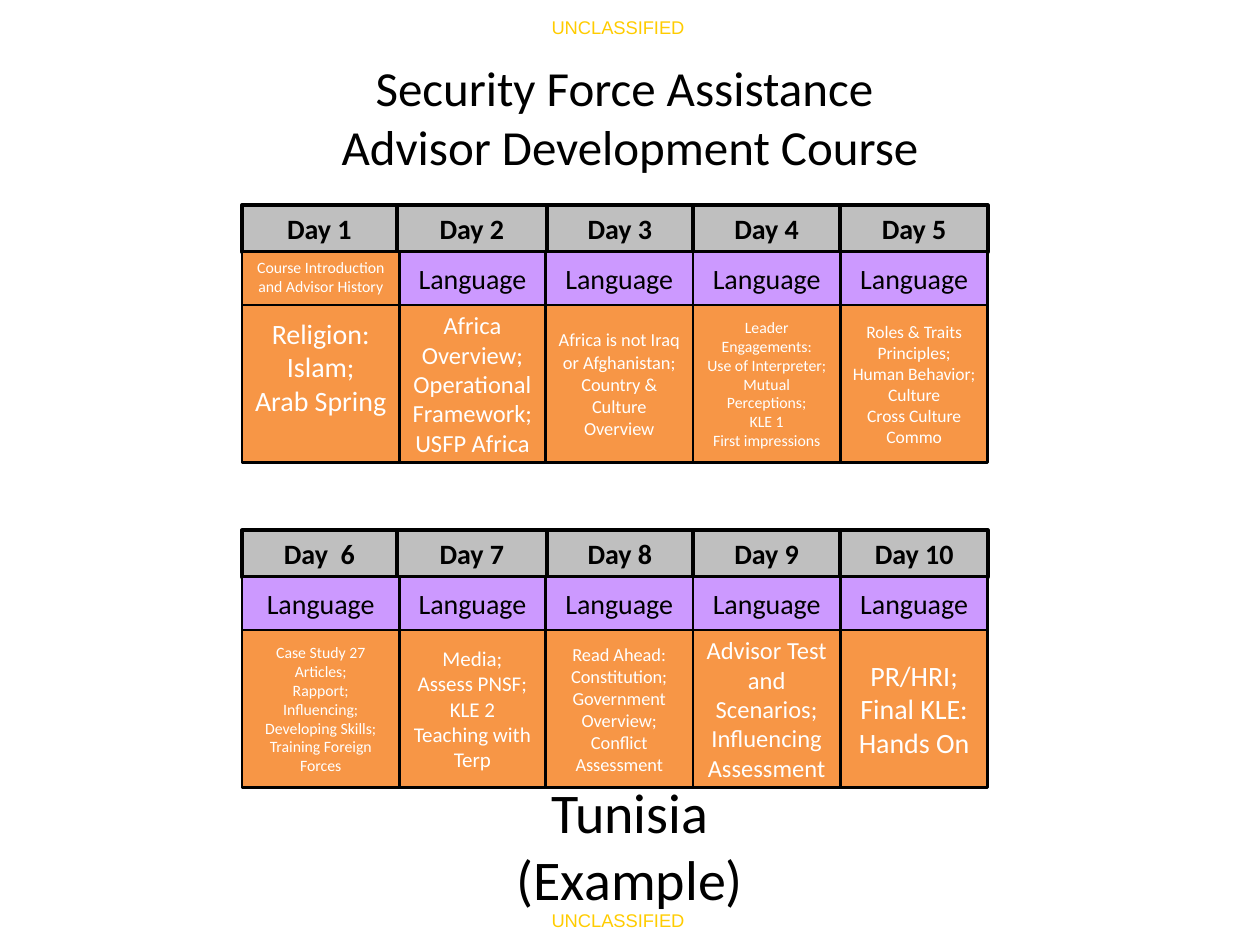
from dataclasses import dataclass
from itertools import pairwise

from pptx import Presentation
from pptx.dml.color import RGBColor
from pptx.enum.shapes import MSO_SHAPE as Shape
from pptx.enum.text import MSO_ANCHOR as Anchor, PP_ALIGN as Align
from pptx.util import Inches, Pt

BLACK = RGBColor(0x00, 0x00, 0x00)
WHITE = RGBColor(0xFF, 0xFF, 0xFF)
GRAY = RGBColor(0xBF, 0xBF, 0xBF)
ORANGE = RGBColor(0xF7, 0x96, 0x46)
PURPLE = RGBColor(0xCC, 0x99, 0xFF)
YELLOW = RGBColor(0xFF, 0xCC, 0x00)

DAY_EDGES = [1.92, 3.15, 4.34, 5.5, 6.67, 7.84]
EDGES = [1.92, 3.17, 4.33, 5.5, 6.67, 7.84]
DAY_H, LANG_H, TOPIC_H = 0.37, 0.42, 1.25


@dataclass
class Style:
    fill: RGBColor
    color: RGBColor
    line: float = 1.5
    bold: bool = False


@dataclass
class Topic:
    text: str
    size: float
    head: float = 0.01  # top inset
    foot: float = 0.01  # bottom inset


@dataclass
class Week:
    top: float
    days: list[str]
    topics: list[Topic]
    intro: str = ""  # takes the first language slot


DAY = Style(GRAY, BLACK, 2.25, True)
LANG = Style(PURPLE, BLACK)
TOPIC = Style(ORANGE, WHITE)

WEEKS = [
    Week(1.63, ["Day 1", "Day 2", "Day 3", "Day 4", "Day 5"], [
        Topic("Religion:\nIslam;\nArab Spring", 16, foot=0.28),
        Topic("Africa Overview;\nOperational Framework;\nUSFP Africa", 14),
        Topic("Africa is not Iraq or Afghanistan;\nCountry & Culture Overview", 10.5),
        Topic("Leader Engagements:\nUse of Interpreter;\nMutual Perceptions;\n"
              "KLE 1\nFirst impressions", 9),
        Topic("Roles & Traits\nPrinciples;\nHuman Behavior;\nCulture\n"
              "Cross Culture Commo", 10),
    ], "Course Introduction and Advisor History"),
    Week(4.21, ["Day  6", "Day 7", "Day 8", "Day 9", "Day 10"], [
        Topic("Case Study 27 Articles;\nRapport;\nInfluencing;\n"
              "Developing Skills;\nTraining Foreign Forces", 9),
        Topic("Media;\nAssess PNSF;\nKLE 2 Teaching with Terp", 12),
        Topic("Read Ahead: Constitution;\nGovernment Overview;\n"
              "Conflict Assessment", 10.5),
        Topic("Advisor Test and Scenarios;\nInfluencing Assessment", 14),
        Topic("PR/HRI;\nFinal KLE:\nHands On", 16),
    ]),
]


def write(frame, text: str, size: float, color: RGBColor, name: str = "Calibri",
          bold: bool = False, align=Align.CENTER) -> None:
    """Fill a text frame and format each paragraph."""
    frame.text = text
    look = {"name": name, "size": Pt(size), "bold": bold}
    for para in frame.paragraphs:
        para.alignment = align
        for key, value in look.items():
            setattr(para.font, key, value)
        para.font.color.rgb = color


def cell(slide, left: float, top: float, right: float, height: float,
         topic: Topic, style: Style, anchor=Anchor.MIDDLE) -> None:
    """Draw one box of the schedule."""
    box = slide.shapes.add_shape(Shape.RECTANGLE, Inches(left), Inches(top),
                                 Inches(right - left), Inches(height))
    box.shadow.inherit = False
    box.fill.solid()
    box.fill.fore_color.rgb = style.fill
    box.line.color.rgb = BLACK
    box.line.width = Pt(style.line)
    frame = box.text_frame
    frame.word_wrap = True
    frame.vertical_anchor = anchor
    frame.margin_top = Inches(topic.head)
    frame.margin_bottom = Inches(topic.foot)
    write(frame, topic.text, topic.size, style.color, bold=style.bold)


def label(slide, left: float, top: float, width: float, height: float,
          text: str, size: float, color: RGBColor = BLACK, wrap: bool = True,
          anchor=Anchor.TOP, **look) -> None:
    """Place free text."""
    box = slide.shapes.add_textbox(Inches(left), Inches(top),
                                   Inches(width), Inches(height))
    box.text_frame.word_wrap = wrap
    box.text_frame.vertical_anchor = anchor
    write(box.text_frame, text, size, color, **look)


def draw_week(slide, week: Week) -> None:
    """Draw day names, topics and the language row."""
    row = week.top + DAY_H
    spans = list(pairwise(EDGES))
    for (left, right), day in zip(pairwise(DAY_EDGES), week.days):
        cell(slide, left, week.top, right, DAY_H, Topic(day, 16), DAY)
    for (left, right), topic in zip(spans, week.topics):
        cell(slide, left, row + LANG_H, right, TOPIC_H, topic, TOPIC)
    if week.intro:
        left, right = spans.pop(0)
        cell(slide, left, row, right, LANG_H, Topic(week.intro, 9, head=0.05),
             TOPIC, Anchor.TOP)
    for left, right in spans:
        cell(slide, left, row, right, LANG_H, Topic("Language", 16), LANG)


def main() -> None:
    deck = Presentation()
    deck.slide_width, deck.slide_height = Inches(10), Inches(7.5)
    slide = deck.slides.add_slide(deck.slide_layouts[6])

    # Classification marks
    for top in (0.08, 7.17):
        label(slide, 4.28, top, 1.27, 0.28, "UNCLASSIFIED", 10.5, YELLOW,
              wrap=False, name="Arial", align=Align.LEFT)

    # Schedule
    for week in WEEKS:
        draw_week(slide, week)

    # Title and country
    label(slide, 0.5, 0.3, 9, 1.25,
          "Security Force Assistance \vAdvisor Development Course", 28,
          anchor=Anchor.MIDDLE)
    label(slide, 0.5, 6.12, 9, 1.72, "Tunisia\n(Example)", 32)

    deck.save("out.pptx")


if __name__ == "__main__":
    main()
